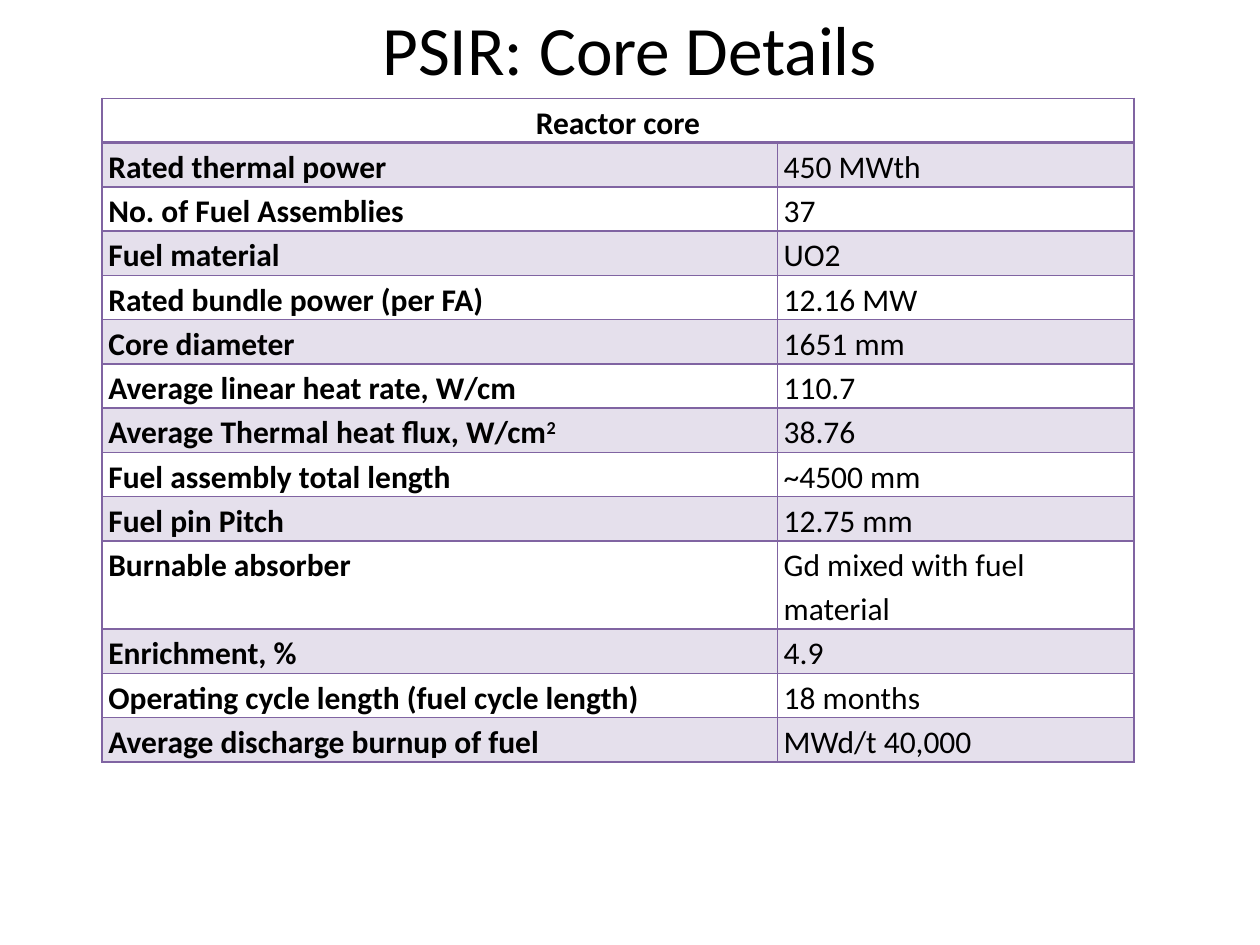
import pptx
import pptx.dml.color
import pptx.enum.text
import pptx.oxml
import pptx.oxml.ns
import pptx.util
from pptx.util import Inches

COLORS = {"text": "000000", "accent": "8064A2"}
ALIGN = pptx.enum.text.PP_ALIGN
ANCHOR = pptx.enum.text.MSO_ANCHOR


def write_text(tf, text, size=18, bold=False, align=ALIGN.LEFT, spacing=None):
    """Fill the first paragraph; whatever follows a ^ is superscript."""
    p = tf.paragraphs[0]
    p.alignment = align
    if spacing:
        p.line_spacing = spacing
    for i, part in enumerate(text.split("^")):
        r = p.add_run()
        r.text = part
        r.font.name = "Calibri"
        r.font.size = pptx.util.Pt(size)
        r.font.bold = bold
        r.font.color.rgb = pptx.dml.color.RGBColor.from_string(COLORS["text"])
        if i:
            r.font._element.set("baseline", "30000")


def add_border(cell, side, width):
    """Draw one side (L, R, T or B) of a cell, width in points."""
    cell._tc.get_or_add_tcPr().append(pptx.oxml.parse_xml(
        f'<a:ln{side} {pptx.oxml.ns.nsdecls("a")} w="{pptx.util.Pt(width)}">'
        f'<a:solidFill><a:srgbClr val="{COLORS["accent"]}"/></a:solidFill>'
        f'</a:ln{side}>'))


prs = pptx.Presentation()
prs.slide_width, prs.slide_height = Inches(10), Inches(7.5)
s = prs.slides.add_slide(prs.slide_layouts[6])

# Table content
rows = [
    ("Reactor core", ""),
    ("Rated thermal power", "450 MWth"),
    ("No. of Fuel Assemblies", "37"),
    ("Fuel material", "UO2"),
    ("Rated bundle power (per FA)", "12.16 MW"),
    ("Core diameter", "1651 mm"),
    ("Average linear heat rate, W/cm", "110.7"),
    ("Average Thermal heat flux, W/cm^2", "38.76"),
    ("Fuel assembly total length", "~4500 mm"),
    ("Fuel pin Pitch", "12.75 mm"),
    ("Burnable absorber", "Gd mixed with fuel material"),
    ("Enrichment, %", "4.9"),
    ("Operating cycle length (fuel cycle length)", "18 months"),
    ("Average discharge burnup of fuel", "MWd/t 40,000"),
]

# Core parameter table
table = s.shapes.add_table(len(rows), 2, Inches(0.81), Inches(0.78),
                           Inches(8.19), Inches(0.35 * len(rows))).table
table.first_row = table.horz_banding = False
table.columns[0].width, table.columns[1].width = Inches(5.36), Inches(2.83)
table.cell(0, 0).merge(table.cell(0, 1))

for i, row in enumerate(rows):
    table.rows[i].height = Inches(0.35)
    for j, text in enumerate(row):
        cell = table.cell(i, j)
        cell.margin_left = cell.margin_right = Inches(0.05)
        cell.margin_top = cell.margin_bottom = 0
        for side in "LRTB":
            header_rule = (i, side) in ((0, "B"), (1, "T"))
            add_border(cell, side, 2 if header_rule else 1)
        # Odd rows carry a light tint of the accent colour
        if i % 2:
            cell.fill.solid()
            cell.fill.fore_color.rgb = pptx.dml.color.RGBColor.from_string(COLORS["accent"])
            color = cell._tc.tcPr.find(pptx.oxml.ns.qn("a:solidFill"))[0]
            color.append(pptx.oxml.parse_xml(
                f'<a:alpha {pptx.oxml.ns.nsdecls("a")} val="20000"/>'))
        else:
            cell.fill.background()
        if text:
            write_text(cell.text_frame, text, bold=j == 0, spacing=1.15,
                       align=ALIGN.LEFT if i else ALIGN.CENTER)

# Title
tf = s.shapes.add_textbox(0, 0, Inches(10), Inches(0.76)).text_frame
tf.word_wrap = True
tf.vertical_anchor = ANCHOR.MIDDLE
write_text(tf, "PSIR: Core Details", size=39.6, align=ALIGN.CENTER)

prs.save("out.pptx")
